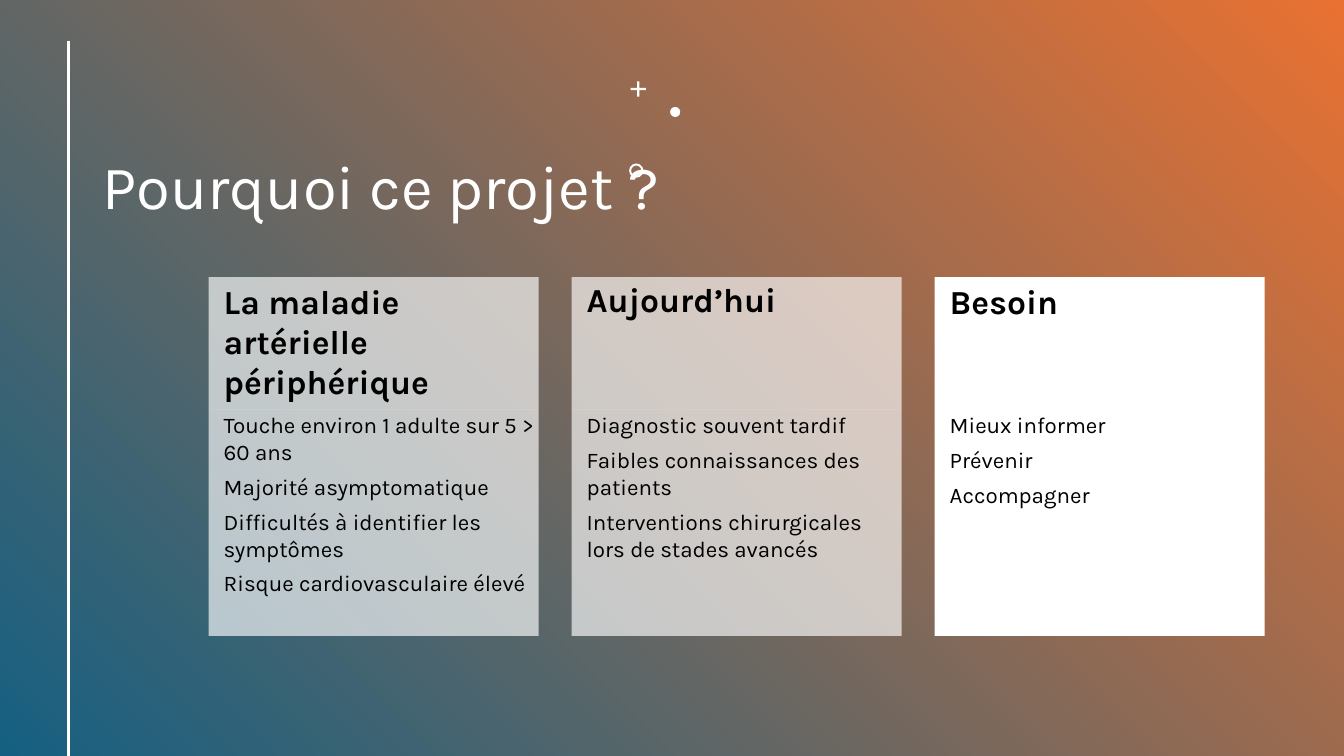
from lxml.etree import SubElement
from pptx import Presentation
from pptx.dml.color import RGBColor
from pptx.enum.shapes import MSO_CONNECTOR, MSO_SHAPE
from pptx.enum.text import MSO_ANCHOR, PP_ALIGN
from pptx.oxml.ns import qn
from pptx.util import Pt

BLUE = RGBColor(0x15, 0x60, 0x82)
ORANGE = RGBColor(0xE9, 0x71, 0x32)
WHITE = RGBColor(0xFF, 0xFF, 0xFF)
BLACK = RGBColor(0x00, 0x00, 0x00)

SLIDE_WIDTH, SLIDE_HEIGHT = 960, 540
CARD_LEFT, CARD_TOP = 149, 198
CARD_WIDTH, CARD_PITCH = 235.7, 259.3
HEADING_HEIGHT, BODY_HEIGHT = 94.3, 162

# heading, heading inset, opacity in percent, statements
CARDS = [
    ("La maladie artérielle périphérique", 2.4, 65, [
        "Touche environ 1 adulte sur 5 > 60 ans",
        "Majorité asymptomatique",
        "Difficultés à identifier les symptômes",
        "Risque cardiovasculaire élevé",
    ]),
    ("Aujourd’hui", 1.2, 65, [
        "Diagnostic souvent tardif",
        "Faibles connaissances des patients",
        "Interventions chirurgicales lors de stades avancés",
    ]),
    ("Besoin", 2.4, 100, ["Mieux informer", "Prévenir", "Accompagner"]),
]

# preset, centre x, centre y, size, adjustment
ORNAMENTS = [
    (MSO_SHAPE.CROSS, 455.9, 63.6, 10.8, 0.43),
    (MSO_SHAPE.OVAL, 482.3, 80, 7.2, None),
    (MSO_SHAPE.DONUT, 454.5, 121.9, 10.2, 0.14),
]


class SlideBuilder:
    font = "Karla"

    def __init__(self, slide):
        self.slide = slide

    def preset(self, kind, left, top, width, height, opacity=100):
        """Add a borderless white shape, see-through below 100 percent opacity."""
        shape = self.slide.shapes.add_shape(
            kind, Pt(left), Pt(top), Pt(width), Pt(height))
        shape.shadow.inherit = False
        shape.line.fill.background()
        shape.fill.solid()
        shape.fill.fore_color.rgb = WHITE
        if opacity < 100:
            color = shape._element.spPr.find(qn("a:solidFill"))[0]
            SubElement(color, qn("a:alpha")).set("val", str(opacity * 1000))
        return shape

    def backdrop(self):
        fill = self.preset(
            MSO_SHAPE.RECTANGLE, 0, 0, SLIDE_WIDTH, SLIDE_HEIGHT).fill
        fill.gradient()
        fill.gradient_angle = 45
        for stop, color in zip(fill.gradient_stops, (BLUE, ORANGE)):
            stop.color.rgb = color

    def add_text(self, paragraph, text, size, color, bold=False):
        run = paragraph.add_run()
        run.text = text
        run.font.name = self.font
        run.font.size = Pt(size)
        run.font.bold = bold
        run.font.color.rgb = color

    def title(self, text):
        box = self.slide.shapes.add_textbox(Pt(66.2), Pt(97.2), Pt(420), Pt(65.5))
        frame = box.text_frame
        frame.word_wrap = True
        frame.vertical_anchor = MSO_ANCHOR.BOTTOM
        frame.paragraphs[0].line_spacing = 0.9
        self.add_text(frame.paragraphs[0], text, 44, WHITE)

    def rule(self, x, top, bottom):
        rule = self.slide.shapes.add_connector(
            MSO_CONNECTOR.STRAIGHT, Pt(x), Pt(top), Pt(x), Pt(bottom))
        rule.line.color.rgb = WHITE
        rule.line.width = Pt(2)
        SubElement(rule._element.spPr, qn("a:effectLst"))

    def ornament(self, kind, x, y, size, adjustment):
        shape = self.preset(kind, x - size / 2, y - size / 2, size, size)
        if adjustment is not None:
            shape.adjustments[0] = adjustment

    def panel(self, left, top, height, texts, size, inset, opacity, bold=False):
        shape = self.preset(
            MSO_SHAPE.RECTANGLE, left, top, CARD_WIDTH, height, opacity)
        frame = shape.text_frame
        frame.word_wrap = True
        frame.vertical_anchor = MSO_ANCHOR.TOP
        frame.margin_left = Pt(10.8)
        frame.margin_top = frame.margin_right = frame.margin_bottom = Pt(inset)
        for index, text in enumerate(texts):
            paragraph = frame.add_paragraph() if index else frame.paragraphs[0]
            paragraph.alignment = PP_ALIGN.LEFT
            paragraph.space_after = Pt(0.35 * size)
            self.add_text(paragraph, text, size, BLACK, bold)

    def card(self, left, heading, inset, opacity, statements):
        self.panel(left, CARD_TOP, HEADING_HEIGHT, [heading], 24, inset,
                   opacity, bold=True)
        self.panel(left, CARD_TOP + HEADING_HEIGHT, BODY_HEIGHT, statements, 16,
                   1.6, opacity)


def main():
    deck = Presentation()
    deck.slide_width, deck.slide_height = Pt(SLIDE_WIDTH), Pt(SLIDE_HEIGHT)
    builder = SlideBuilder(deck.slides.add_slide(deck.slide_layouts[6]))
    builder.backdrop()
    builder.title("Pourquoi ce projet ?")
    builder.rule(49, 29, SLIDE_HEIGHT)
    for ornament in ORNAMENTS:
        builder.ornament(*ornament)
    for column, card in enumerate(CARDS):
        builder.card(CARD_LEFT + column * CARD_PITCH, *card)
    deck.save("out.pptx")


if __name__ == "__main__":
    main()
